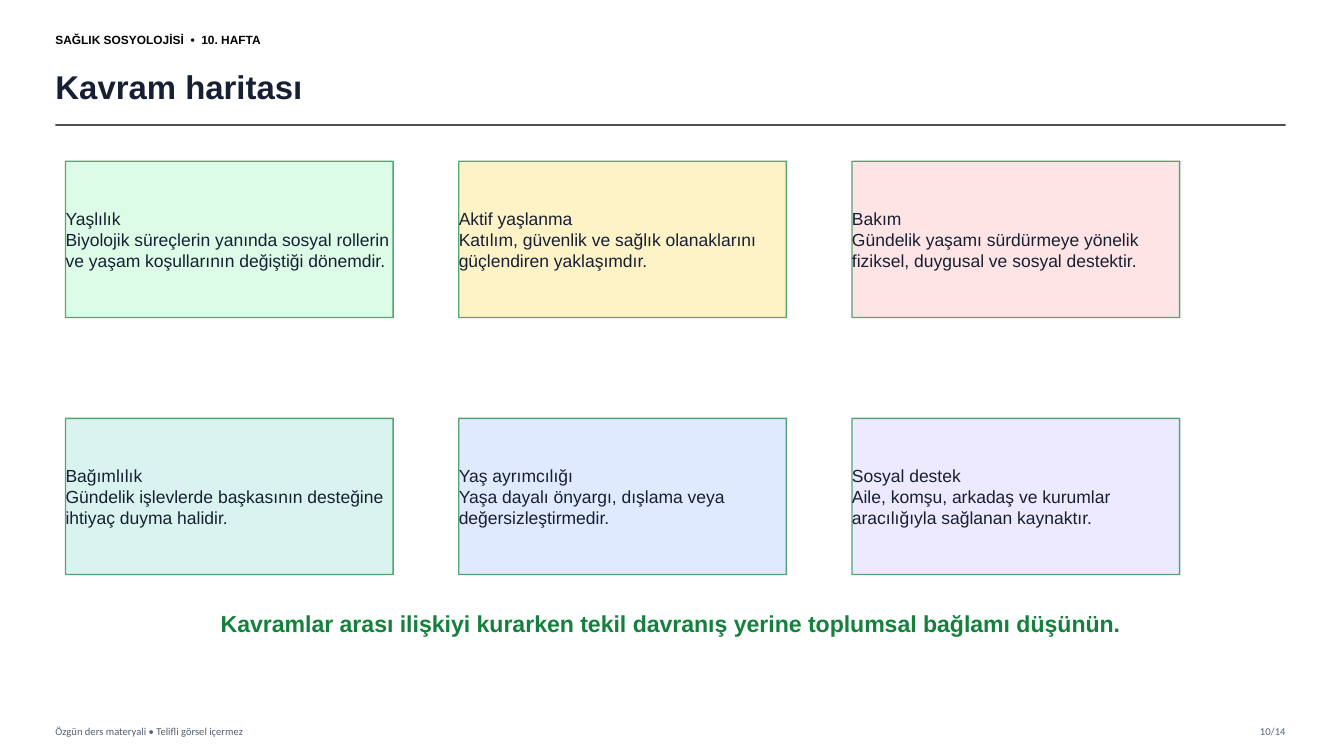
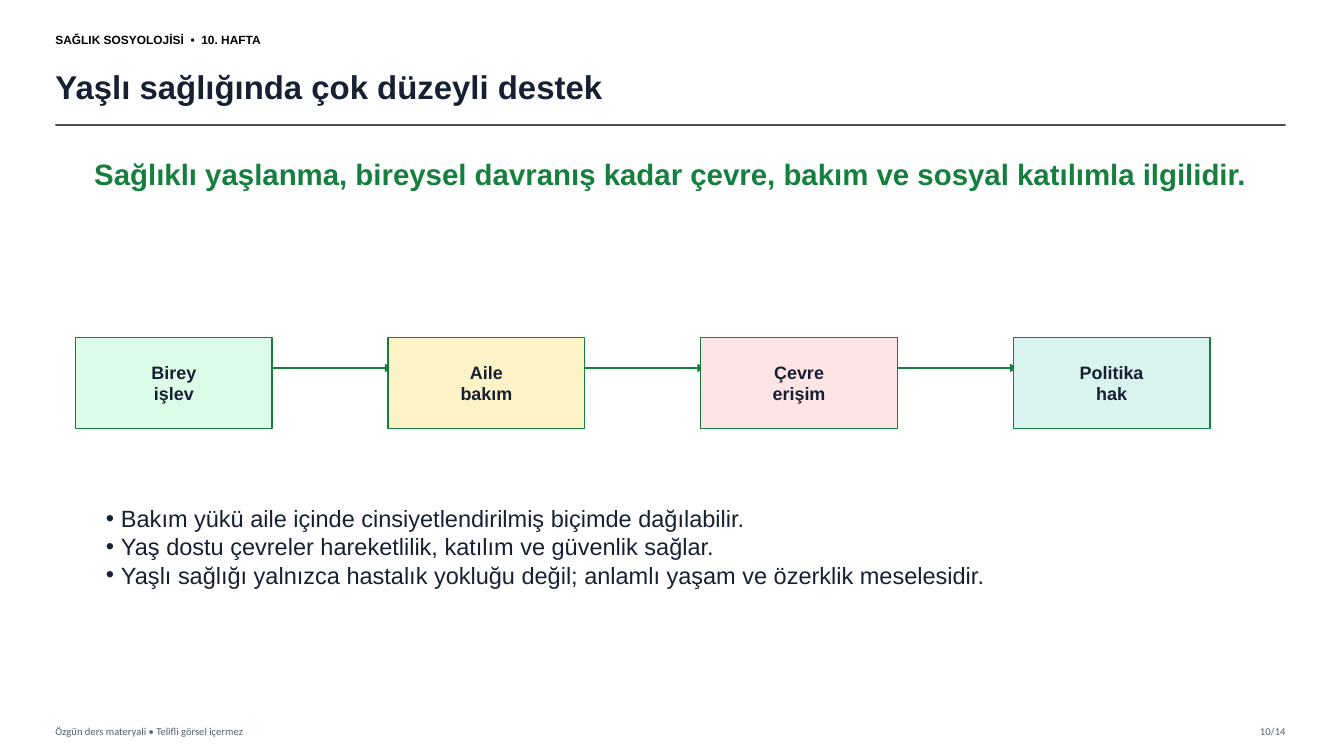
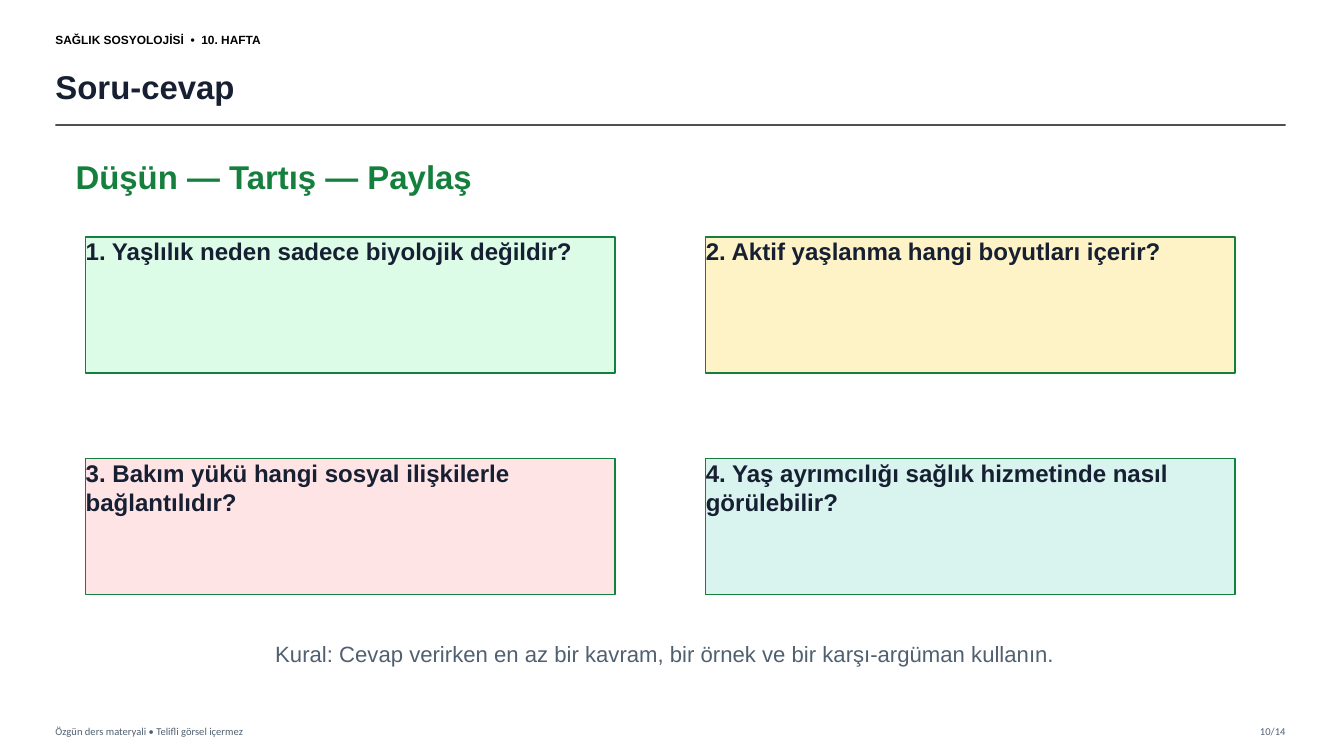
from lxml import etree
from pptx import Presentation
from pptx.dml.color import RGBColor
from pptx.enum.shapes import MSO_CONNECTOR, MSO_SHAPE
from pptx.enum.text import MSO_ANCHOR, MSO_AUTO_SIZE, PP_ALIGN
from pptx.oxml.ns import qn
from pptx.util import Inches, Pt

STRAIGHT = MSO_CONNECTOR.STRAIGHT
RECTANGLE = MSO_SHAPE.RECTANGLE
TOP, MIDDLE = MSO_ANCHOR.TOP, MSO_ANCHOR.MIDDLE
NO_AUTOFIT = MSO_AUTO_SIZE.NONE
LEFT, CENTER, RIGHT = PP_ALIGN.LEFT, PP_ALIGN.CENTER, PP_ALIGN.RIGHT

BLACK = RGBColor(0x00, 0x00, 0x00)
INK = RGBColor(0x17, 0x20, 0x33)
RULE = RGBColor(0x33, 0x33, 0x33)
SLATE = RGBColor(0x50, 0x60, 0x70)
GREEN = RGBColor(0x15, 0x80, 0x3D)
MINT = RGBColor(0xDC, 0xFC, 0xE7)
CREAM = RGBColor(0xFE, 0xF3, 0xC7)
ROSE = RGBColor(0xFF, 0xE4, 0xE6)
AQUA = RGBColor(0xD9, 0xF3, 0xEE)
SKY = RGBColor(0xDF, 0xEA, 0xFE)
LILAC = RGBColor(0xED, 0xE9, 0xFE)
TINTS = [MINT, CREAM, ROSE, AQUA, SKY, LILAC]

CONTENT_LAYOUT, TITLE_LAYOUT = 1, 5
BULLET_INDENT = Inches(0.15)
FRAME = {
    "word_wrap": True,
    "auto_size": NO_AUTOFIT,
    "margin_left": 0,
    "margin_top": 0,
    "margin_right": 0,
    "margin_bottom": 0,
}

CONCEPTS = [
    ["Yaşlılık", "Biyolojik süreçlerin yanında sosyal rollerin ve yaşam koşullarının değiştiği dönemdir."],
    ["Aktif yaşlanma", "Katılım, güvenlik ve sağlık olanaklarını güçlendiren yaklaşımdır."],
    ["Bakım", "Gündelik yaşamı sürdürmeye yönelik fiziksel, duygusal ve sosyal destektir."],
    ["Bağımlılık", "Gündelik işlevlerde başkasının desteğine ihtiyaç duyma halidir."],
    ["Yaş ayrımcılığı", "Yaşa dayalı önyargı, dışlama veya değersizleştirmedir."],
    ["Sosyal destek", "Aile, komşu, arkadaş ve kurumlar aracılığıyla sağlanan kaynaktır."],
]
LEVELS = [["Birey", "işlev"], ["Aile", "bakım"], ["Çevre", "erişim"], ["Politika", "hak"]]
SUPPORT_POINTS = [
    "Bakım yükü aile içinde cinsiyetlendirilmiş biçimde dağılabilir.",
    "Yaş dostu çevreler hareketlilik, katılım ve güvenlik sağlar.",
    "Yaşlı sağlığı yalnızca hastalık yokluğu değil; anlamlı yaşam ve özerklik meselesidir.",
]
QUESTIONS = [
    ["1. Yaşlılık neden sadece biyolojik değildir?"],
    ["2. Aktif yaşlanma hangi boyutları içerir?"],
    ["3. Bakım yükü hangi sosyal ilişkilerle bağlantılıdır?"],
    ["4. Yaş ayrımcılığı sağlık hizmetinde nasıl görülebilir?"],
]


def style(size, color=INK, bold=False, name="Arial", align=LEFT, anchor=TOP):
    return {
        "font": {"size": Pt(size), "bold": bold, "name": name},
        "color": color,
        "align": align,
        "anchor": anchor,
    }


KICKER = style(8.5, BLACK, True, anchor=MIDDLE)
TITLE = style(23.5, bold=True, anchor=MIDDLE)
FOOTER = style(7.5, SLATE, name="Calibri", anchor=MIDDLE)
PAGE_NUMBER = {**FOOTER, "align": RIGHT}
CONCEPT = style(12.5, anchor=MIDDLE)
LEVEL = style(12.8, bold=True, align=CENTER, anchor=MIDDLE)
QUESTION = style(17.2, bold=True)
LIST = style(16.8)


def apply(target, values):
    for name, value in values.items():
        setattr(target, name, value)


def place(shape, left, top, width, height):
    sides = {"left": left, "top": top, "width": width, "height": height}
    apply(shape, {name: Inches(value) for name, value in sides.items()})


def add_bullet(para):
    properties = para._p.get_or_add_pPr()
    properties.set("marL", str(BULLET_INDENT))
    properties.set("indent", str(-BULLET_INDENT))
    etree.SubElement(properties, qn("a:buFont")).set("typeface", "Arial")
    etree.SubElement(properties, qn("a:buChar")).set("char", "•")


def write(shape, lines, look, bulleted=False):
    frame = shape.text_frame
    apply(frame, {**FRAME, "vertical_anchor": look["anchor"]})
    for index, line in enumerate(lines):
        para = frame.add_paragraph() if index else frame.paragraphs[0]
        if bulleted:
            add_bullet(para)
        apply(para, {"alignment": look["align"], "space_before": Pt(0)})
        span = para.add_run()
        span.text = line
        apply(span.font, look["font"])
        span.font.color.rgb = look["color"]


def add_text(page, area, text, look):
    box = page.shapes.add_textbox(*map(Inches, area))
    write(box, [text], look)


def set_line(shape, color, width, opacity=100):
    shape.line.color.rgb = color
    shape.line.width = Pt(width)
    if opacity < 100:
        paint = shape._element.spPr.find(qn("a:ln")).find(".//" + qn("a:srgbClr"))
        etree.SubElement(paint, qn("a:alpha")).set("val", str(opacity * 1000))


def add_box(page, area, fill, lines, look, opacity=100):
    box = page.shapes.add_shape(RECTANGLE, *map(Inches, area))
    box.shadow.inherit = False
    box.fill.solid()
    box.fill.fore_color.rgb = fill
    set_line(box, GREEN, 1, opacity)
    write(box, lines, look)


def add_grid(page, items, columns, origin, step, size, look, opacity=100):
    for index, (lines, fill) in enumerate(zip(items, TINTS)):
        row, column = divmod(index, columns)
        corner = (origin[0] + column * step[0], origin[1] + row * step[1])
        add_box(page, corner + size, fill, lines, look, opacity)


def add_line(page, start, end, color, width, opacity=100, arrow=False):
    line = page.shapes.add_connector(STRAIGHT, *map(Inches, start + end))
    set_line(line, color, width, opacity)
    properties = line._element.spPr
    if arrow:
        etree.SubElement(properties.find(qn("a:ln")), qn("a:tailEnd")).set("type", "triangle")
    etree.SubElement(properties, qn("a:effectLst"))


def add_page(deck, title, layout=TITLE_LAYOUT):
    page = deck.slides.add_slide(deck.slide_layouts[layout])
    place(page.shapes.title, 0.55, 0.58, 11.95, 0.55)
    write(page.shapes.title, [title], TITLE)
    add_text(page, (0.55, 0.25, 3.6, 0.28), "SAĞLIK SOSYOLOJİSİ  •  10. HAFTA", KICKER)
    add_line(page, (0.55, 1.24), (12.75, 1.24), RULE, 1.2, opacity=85)
    add_text(page, (0.55, 7.14, 6, 0.22), "Özgün ders materyali • Telifli görsel içermez", FOOTER)
    add_text(page, (12.1, 7.14, 0.65, 0.22), "10/14", PAGE_NUMBER)
    return page


def build_concept_map(deck):
    page = add_page(deck, "Kavram haritası")
    add_grid(page, CONCEPTS, 3, (0.65, 1.6), (3.9, 2.55), (3.25, 1.55), CONCEPT, opacity=70)
    add_text(
        page,
        (1, 6.05, 11.3, 0.45),
        "Kavramlar arası ilişkiyi kurarken tekil davranış yerine toplumsal bağlamı düşünün.",
        style(16.5, GREEN, True, align=CENTER),
    )


def build_support_levels(deck):
    page = add_page(deck, "Yaşlı sağlığında çok düzeyli destek", CONTENT_LAYOUT)
    step = 3.1
    for index in range(len(LEVELS) - 1):
        left = 2.55 + index * step
        add_line(page, (left, 3.65), (left + 1.35, 3.65), GREEN, 2, arrow=True)
    add_grid(page, LEVELS, len(LEVELS), (0.75, 3.35), (step, 0), (1.95, 0.9), LEVEL)
    add_text(
        page,
        (0.8, 1.55, 11.7, 1.05),
        "Sağlıklı yaşlanma, bireysel davranış kadar çevre, bakım ve sosyal katılımla ilgilidir.",
        style(21, GREEN, True, align=CENTER),
    )
    body = page.placeholders[1]
    place(body, 1.05, 5, 11, 1.25)
    write(body, SUPPORT_POINTS, LIST, bulleted=True)


def build_questions(deck):
    page = add_page(deck, "Soru-cevap")
    add_text(page, (0.75, 1.55, 5.7, 0.5), "Düşün — Tartış — Paylaş", style(23.5, GREEN, True))
    add_grid(page, QUESTIONS, 2, (0.85, 2.35), (6.15, 2.2), (5.25, 1.35), QUESTION)
    add_text(
        page,
        (1, 6.35, 11.2, 0.35),
        "Kural: Cevap verirken en az bir kavram, bir örnek ve bir karşı-argüman kullanın.",
        style(15.8, SLATE, align=CENTER),
    )


def main():
    deck = Presentation()
    apply(deck, {"slide_width": Inches(13.33), "slide_height": Inches(7.5)})
    build_concept_map(deck)
    build_support_levels(deck)
    build_questions(deck)
    deck.save("out.pptx")


if __name__ == "__main__":
    main()
